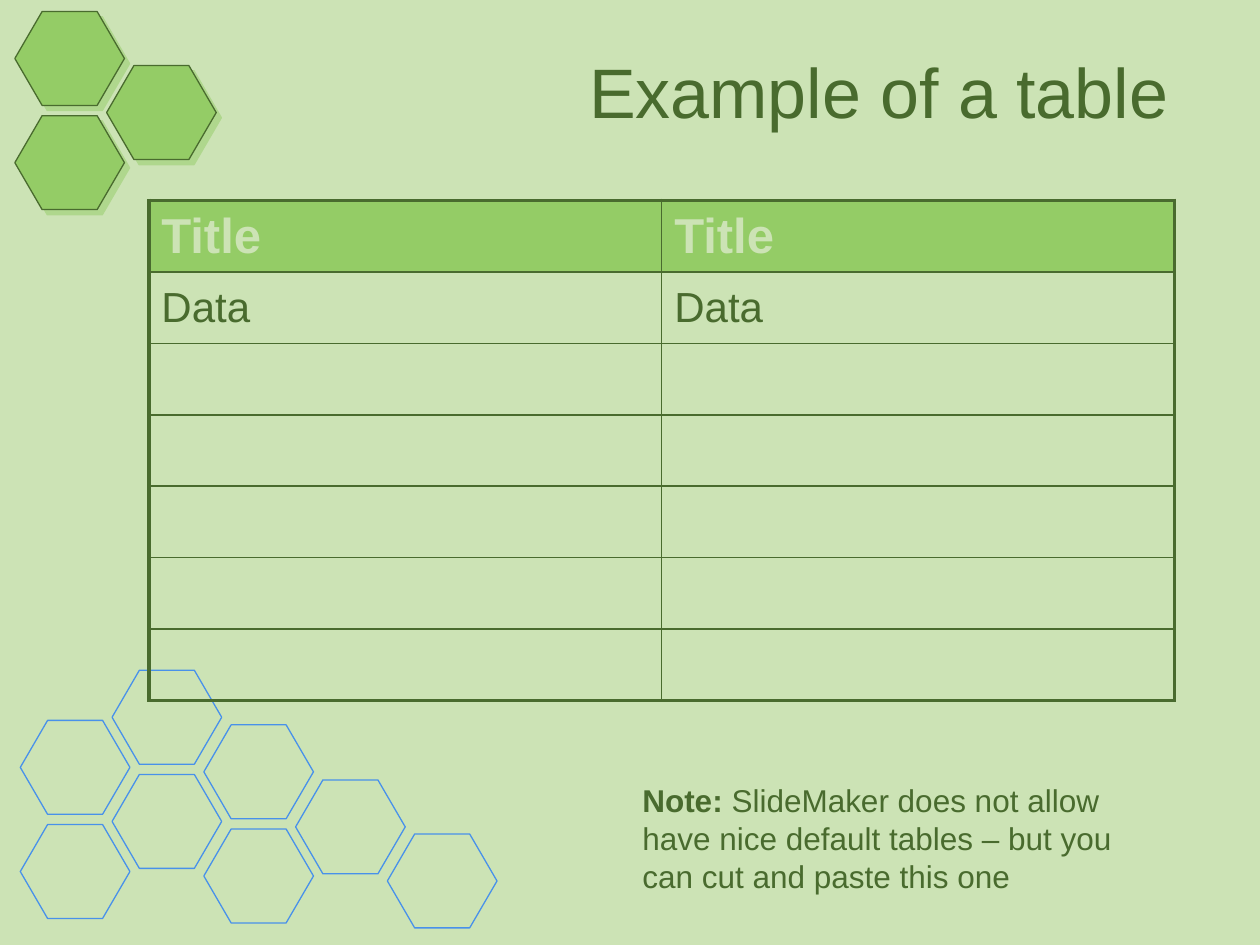
from dataclasses import dataclass

from lxml.etree import SubElement
from pptx import Presentation
from pptx.dml.color import RGBColor
from pptx.enum.shapes import MSO_SHAPE
from pptx.enum.text import MSO_ANCHOR, PP_ALIGN
from pptx.oxml.ns import qn
from pptx.util import Cm, Pt


@dataclass(frozen=True)
class Theme:
    pale: str = "CCE3B5"
    leaf: str = "94CC66"
    forest: str = "496B2E"
    blue: str = "4891EA"
    face: str = "Arial"
    title: int = 40
    header: int = 28
    body: int = 24
    note: int = 18
    thin: float = 1
    thick: float = 2.25


theme = Theme()


def style_text(paragraph, size, color, bold=None):
    font = paragraph.font
    font.name, font.size, font.bold = theme.face, Pt(size), bold
    font.color.rgb = RGBColor.from_string(color)


def add_honeycomb(left, columns, line, fill=None):
    """Draw hexagon columns, each given as (top, count), all in centimetres."""
    for col, (top, count) in enumerate(columns):
        for row in range(count):
            hexagon = slide.shapes.add_shape(
                MSO_SHAPE.HEXAGON, Cm(left + 1.85 * col), Cm(top + 2.1 * row), Cm(2.21), Cm(1.9))
            hexagon.adjustments[0] = 0.29
            hexagon.adjustments[1] = 1.15
            hexagon.line.color.rgb = RGBColor.from_string(line)
            hexagon.line.width = Pt(0.75)
            hexagon.shadow.inherit = False
            if fill is None:
                hexagon.fill.background()
                continue
            hexagon.fill.solid()
            hexagon.fill.fore_color.rgb = RGBColor.from_string(fill)
            effects = hexagon._element.spPr.find(qn("a:effectLst"))
            shadow = SubElement(effects, qn("a:outerShdw"), dist=str(Pt(4.2)),
                                dir="2700000", algn="ctr", rotWithShape="0")
            tint = SubElement(shadow, qn("a:srgbClr"), val=fill)
            SubElement(tint, qn("a:alpha"), val="50000")


# Slide and background
deck = Presentation()
deck.slide_width, deck.slide_height = Cm(25.4), Cm(19.05)
slide = deck.slides.add_slide(deck.slide_layouts[6])
slide.background.fill.solid()
slide.background.fill.fore_color.rgb = RGBColor.from_string(theme.pale)

# Honeycomb decoration: outlined at the bottom, filled at the top
add_honeycomb(0.41, [(14.52, 2), (13.51, 2), (14.61, 2), (15.72, 1), (16.81, 1)], theme.blue)
add_honeycomb(0.3, [(0.23, 2), (1.32, 1)], theme.forest, theme.leaf)

# Title
heading = slide.shapes.add_textbox(Cm(4.7), Cm(0.71), Cm(19.1), Cm(2.21)).text_frame
heading.word_wrap = True
heading.vertical_anchor = MSO_ANCHOR.MIDDLE
heading.text = "Example of a table"
heading.paragraphs[0].alignment = PP_ALIGN.RIGHT
style_text(heading.paragraphs[0], theme.title, theme.forest)

# Table: a header row, a data row and five empty rows
rows = [["Title"] * 2, ["Data"] * 2] + [[""] * 2] * 5
last_row, last_col = len(rows) - 1, len(rows[0]) - 1
grid = slide.shapes.add_table(
    len(rows), len(rows[0]), Cm(3), Cm(4.04), Cm(20.68), Cm(10.08)).table
grid.first_row = grid.horz_banding = False

for r, labels in enumerate(rows):
    for c, label in enumerate(labels):
        cell = grid.cell(r, c)
        cell.text = label
        cell.vertical_anchor = MSO_ANCHOR.MIDDLE
        is_header = r == 0
        style_text(cell.text_frame.paragraphs[0],
                   theme.header if is_header else theme.body,
                   theme.pale if is_header else theme.forest, is_header)

        # Thick lines around the table, thin lines inside
        outer_edges = {"a:lnL": c == 0, "a:lnR": c == last_col,
                       "a:lnT": r == 0, "a:lnB": r == last_row}
        for edge, is_outer in outer_edges.items():
            width = Pt(theme.thick if is_outer else theme.thin)
            border = SubElement(cell._tc.get_or_add_tcPr(), qn(edge), w=str(width))
            ink = SubElement(border, qn("a:solidFill"))
            SubElement(ink, qn("a:srgbClr"), val=theme.forest)

        if is_header:
            cell.fill.solid()
            cell.fill.fore_color.rgb = RGBColor.from_string(theme.leaf)
        else:
            cell.fill.background()

# Note
note = slide.shapes.add_textbox(Cm(12.7), Cm(15.62), Cm(10.69), Cm(2.54)).text_frame
note.word_wrap = True
remark = note.paragraphs[0]
style_text(remark, theme.note, theme.forest)
for words, bold in [
    ("Note: ", True),
    ("SlideMaker does not allow have nice default tables – but you can cut and paste this one", False),
]:
    run = remark.add_run()
    run.text, run.font.bold = words, bold

deck.save("out.pptx")
